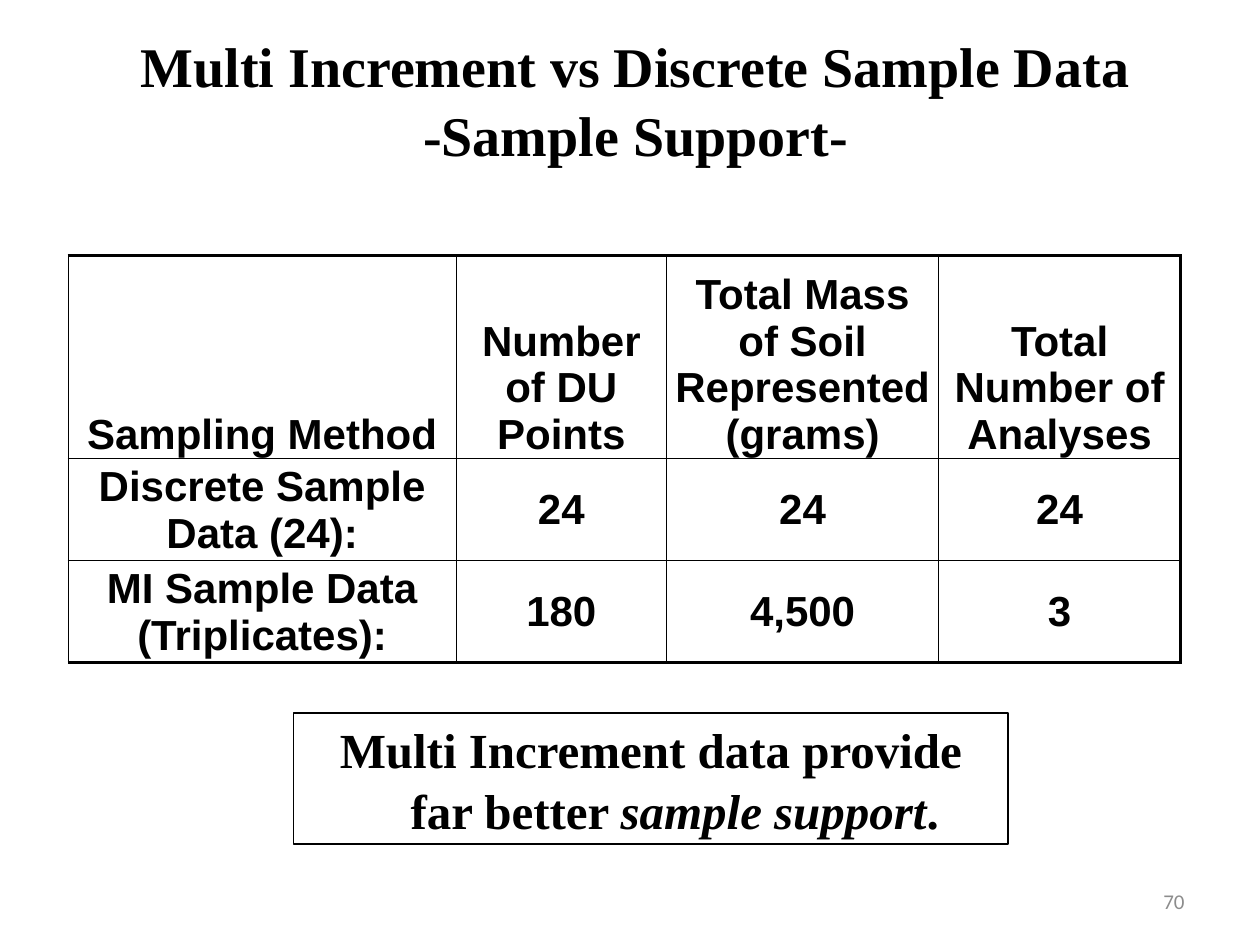
import pptx
import pptx.util
import pptx.dml.color
import pptx.enum.text
import pptx.enum.shapes
import pptx.oxml
import pptx.oxml.ns

Inches, Pt = pptx.util.Inches, pptx.util.Pt
Color = pptx.dml.color.RGBColor
Align = pptx.enum.text.PP_ALIGN
Anchor = pptx.enum.text.MSO_ANCHOR

BLACK = Color(0x00, 0x00, 0x00)
GRAY = Color(0x8C, 0x8C, 0x8C)
SERIF = "Times New Roman"

# Content: a paragraph is a list of (text, italic) runs or a plain string
TITLE = ["Multi Increment vs Discrete Sample Data", "-Sample Support-"]
ROWS = [
    [["Sampling Method"], ["Number of DU Points"],
     ["Total Mass", "of Soil Represented\v(grams)"],
     ["Total Number of Analyses"]],
    [["Discrete Sample Data (24):"], ["24"], ["24"], ["24"]],
    [["MI Sample Data\v(Triplicates):"], ["180"], ["4,500"], ["3"]],
]
NOTE = [[("Multi Increment data provide far better ", False),
         ("sample support", True), (".", False)]]
PAGE = ["70"]

# Table grid in inches
COLS = [3.08, 1.67, 2.16, 1.92]
HEIGHTS = [1.61, 0.81, 0.81]
THIN, THICK = 0.5, 2


def write(frame, paras, font=SERIF, size=24, color=BLACK, bold=True,
          align=Align.CENTER, space=None, hang=0):
    for i, para in enumerate(paras):
        p = frame.paragraphs[0] if i == 0 else frame.add_paragraph()
        p.alignment = align
        if space:
            p.line_spacing = space
        if hang:
            props = p._p.get_or_add_pPr()
            props.set("marL", str(Inches(hang)))
            props.set("indent", str(-Inches(hang)))
        if isinstance(para, str):
            p.text = para
        else:
            for text, slant in para:
                run = p.add_run()
                run.text = text
                run.font.italic = slant
        p.font.name, p.font.size, p.font.bold = font, Pt(size), bold
        p.font.color.rgb = color
        for run in p.runs:
            run.font.name, run.font.size, run.font.bold = font, Pt(size), bold
            run.font.color.rgb = color


def place(shape, left, top, width, height):
    shape.left, shape.top = Inches(left), Inches(top)
    shape.width, shape.height = Inches(width), Inches(height)


def border(cell, **widths):
    props = cell._tc.get_or_add_tcPr()
    for n, side in enumerate(("L", "R", "T", "B")):
        line = pptx.oxml.parse_xml(
            f'<a:ln{side} {pptx.oxml.ns.nsdecls("a")} w="{Pt(widths[side])}">'
            f'<a:solidFill><a:srgbClr val="{BLACK}"/></a:solidFill>'
            f'</a:ln{side}>')
        props.insert(n, line)


deck = pptx.Presentation()
deck.slide_width, deck.slide_height = Inches(10), Inches(7.5)
slide = deck.slides.add_slide(deck.slide_layouts[5])

# Title
title = slide.shapes.title
place(title, 0.17, 0.19, 9.75, 1.18)
title.text_frame.auto_size = pptx.enum.text.MSO_AUTO_SIZE.NONE
title.text_frame.vertical_anchor = Anchor.MIDDLE
write(title.text_frame, TITLE, size=32, space=1.04)

# Table
last_row, last_col = len(ROWS) - 1, len(COLS) - 1
table = slide.shapes.add_table(
    len(ROWS), len(COLS), Inches(0.54), Inches(2.03),
    Inches(sum(COLS)), Inches(sum(HEIGHTS))).table
table.first_row = table.horz_banding = False
for col, width in zip(table.columns, COLS):
    col.width = Inches(width)
for r, row in enumerate(ROWS):
    table.rows[r].height = Inches(HEIGHTS[r])
    for c, paras in enumerate(row):
        cell = table.cell(r, c)
        cell.margin_left = cell.margin_right = cell.margin_top = Inches(0.01)
        cell.margin_bottom = 0
        cell.vertical_anchor = Anchor.MIDDLE if r else Anchor.BOTTOM
        cell.fill.background()
        border(cell, L=THIN, R=THICK if c == last_col else THIN,
               T=THIN if r else THICK, B=THICK if r == last_row else THIN)
        write(cell.text_frame, paras, font="Arial")

# Boxed conclusion
box = slide.shapes.add_shape(
    pptx.enum.shapes.MSO_SHAPE.RECTANGLE,
    Inches(2.33), Inches(5.66), Inches(5.67), Inches(1.04))
box.shadow.inherit = False
box.fill.background()
box.line.color.rgb, box.line.width = BLACK, Pt(0.75)
box.text_frame.word_wrap = True
box.text_frame.vertical_anchor = Anchor.MIDDLE
write(box.text_frame, NOTE, size=28, space=1.04, hang=0.38)

# Page number
page = slide.shapes.add_textbox(
    Inches(7.17), Inches(6.95), Inches(2.33), Inches(0.4))
page.text_frame.word_wrap = True
page.text_frame.vertical_anchor = Anchor.MIDDLE
write(page.text_frame, PAGE, font="Calibri", size=12, color=GRAY,
      bold=False, align=Align.RIGHT)

deck.save("out.pptx")
